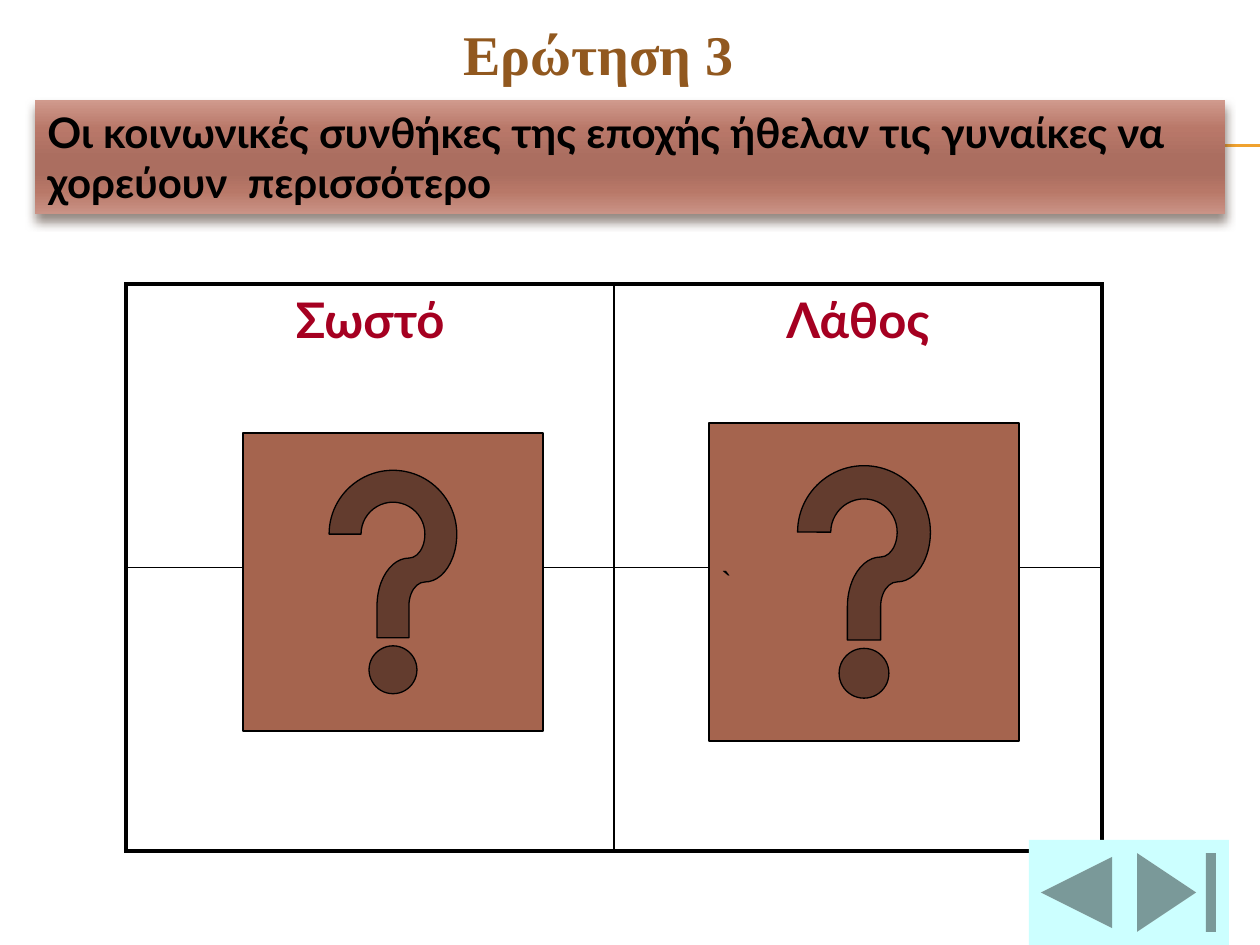
import pptx
import pptx.util
import pptx.dml.color
import pptx.enum.shapes
import pptx.enum.text
import pptx.oxml
import pptx.oxml.ns
import lxml.etree

SCALE = 914400 / 126
COLOURS = {
    "rule": "F0A22E", "heading": "91581F", "answer": "A50021", "button": "A5644E",
    "navigation": "CCFFFF", "ink": "000000", "paper": "FFFFFF", "shadow": "4E3B30",
}
BANNER_STOPS = [(0, "D09A8D"), (25, "B97869"), (50, "AB6E60"),
                (65, "AB6E60"), (80, "B87868"), (100, "CA9386")]
SHAPES = pptx.enum.shapes.MSO_SHAPE
ANCHORS = pptx.enum.text.MSO_ANCHOR
ALIGN = pptx.enum.text.PP_ALIGN


def px(length):
    return pptx.util.Emu(round(length * SCALE))


def colour(name):
    return pptx.dml.color.RGBColor.from_string(COLOURS[name])


def add_child(parent, tag, **attributes):
    child = lxml.etree.SubElement(parent, pptx.oxml.ns.qn(tag))
    for name, value in attributes.items():
        child.set(name, str(value))
    return child


def add_span(para, text, size, font, ink, bold=True):
    span = para.add_run()
    span.text = text
    span.font.size = pptx.util.Pt(size)
    span.font.name = font
    span.font.bold = bold
    span.font.color.rgb = colour(ink)


def set_title(page, text):
    box = page.shapes.title
    box.left, box.top, box.width, box.height = px(451), px(13), px(336), px(80)
    frame = box.text_frame
    frame.vertical_anchor = ANCHORS.TOP
    frame.word_wrap = False
    para = frame.paragraphs[0]
    para.alignment = ALIGN.LEFT
    add_span(para, text, 32, "Times New Roman", "heading")


def add_rule(page, y):
    rule = page.shapes.add_connector(
        pptx.enum.shapes.MSO_CONNECTOR.STRAIGHT, px(71), px(y), px(1260), px(y))
    rule.line.color.rgb = colour("rule")
    rule.line.width = pptx.util.Pt(0.75)
    add_child(rule._element.spPr, "a:effectLst")


def add_border(cell, side, points):
    line = add_child(cell._tc.get_or_add_tcPr(), f"a:ln{side}", w=pptx.util.Pt(points))
    fill = add_child(line, "a:solidFill")
    add_child(fill, "a:srgbClr", val=COLOURS["ink"])


def add_answers(page, answers):
    table = page.shapes.add_table(
        2, 2, px(126), px(284), px(976), px(567)).table
    for row in range(2):
        for column in range(2):
            cell = table.cell(row, column)
            for side, outer in (("L", column == 0), ("R", column == 1),
                                ("T", row == 0), ("B", row == 1)):
                add_border(cell, side, 2.25 if outer else 1)
            cell.fill.solid()
            cell.fill.fore_color.rgb = colour("paper")
    for column, answer in enumerate(answers):
        para = table.cell(0, column).text_frame.paragraphs[0]
        para.alignment = ALIGN.CENTER
        add_span(para, answer, 28, "Lato", "answer")


def add_button(page, kind, place, fill, outlined=False):
    button = page.shapes.add_shape(kind, *map(px, place))
    button.shadow.inherit = False
    button.fill.solid()
    button.fill.fore_color.rgb = colour(fill)
    if outlined:
        button.line.color.rgb = colour("ink")
        button.line.width = pptx.util.Pt(0.75)
    else:
        button.line.fill.background()
    return button


def add_mark(button, text):
    frame = button.text_frame
    frame.word_wrap = False
    frame.vertical_anchor = ANCHORS.MIDDLE
    para = frame.paragraphs[0]
    para.alignment = ALIGN.LEFT
    add_span(para, text, 18, "Arial", "ink", bold=False)


def add_banner(page, text):
    banner = page.shapes.add_shape(SHAPES.RECTANGLE, px(35), px(100), px(1190), px(114))
    banner.line.fill.background()
    banner.fill.gradient()
    banner.fill.gradient_angle = 270
    properties = banner._element.spPr
    stops = properties.find(".//" + pptx.oxml.ns.qn("a:gsLst"))
    for stop in list(stops):
        stops.remove(stop)
    for position, shade in BANNER_STOPS:
        stop = add_child(stops, "a:gs", pos=position * 1000)
        add_child(stop, "a:srgbClr", val=shade)
    banner.shadow.inherit = False
    effects = properties.find(pptx.oxml.ns.qn("a:effectLst"))
    shadow = add_child(effects, "a:outerShdw", blurRad=pptx.util.Pt(6),
                       dist=pptx.util.Pt(4), dir=90 * 60000, rotWithShape=0)
    tint = add_child(shadow, "a:srgbClr", val=COLOURS["shadow"])
    add_child(tint, "a:alpha", val=60000)
    frame = banner.text_frame
    frame.word_wrap = True
    frame.vertical_anchor = ANCHORS.TOP
    para = frame.paragraphs[0]
    para.alignment = ALIGN.LEFT
    add_span(para, text, 24, "Lato", "ink")


def main():
    deck = pptx.Presentation()
    deck.slide_width, deck.slide_height = px(1260), px(945)
    page = deck.slides.add_slide(deck.slide_layouts[5])
    set_title(page, "Ερώτηση 3")
    for y in (145, 146):
        add_rule(page, y)
    add_answers(page, ["Σωστό", "Λάθος"])
    wrong = add_button(page, SHAPES.ACTION_BUTTON_HELP, (709, 423, 310, 318), "button", True)
    add_mark(wrong, "`")
    add_button(page, SHAPES.ACTION_BUTTON_HELP, (243, 433, 300, 298), "button", True)
    add_button(page, SHAPES.ACTION_BUTTON_END, (1124, 840, 105, 105), "navigation")
    add_button(page, SHAPES.ACTION_BUTTON_BACK_OR_PREVIOUS, (1029, 840, 95, 105), "navigation")
    add_banner(page, "Οι κοινωνικές συνθήκες της εποχής ήθελαν τις γυναίκες να  "
                     "χορεύουν  περισσότερο")
    deck.save("out.pptx")


if __name__ == "__main__":
    main()
